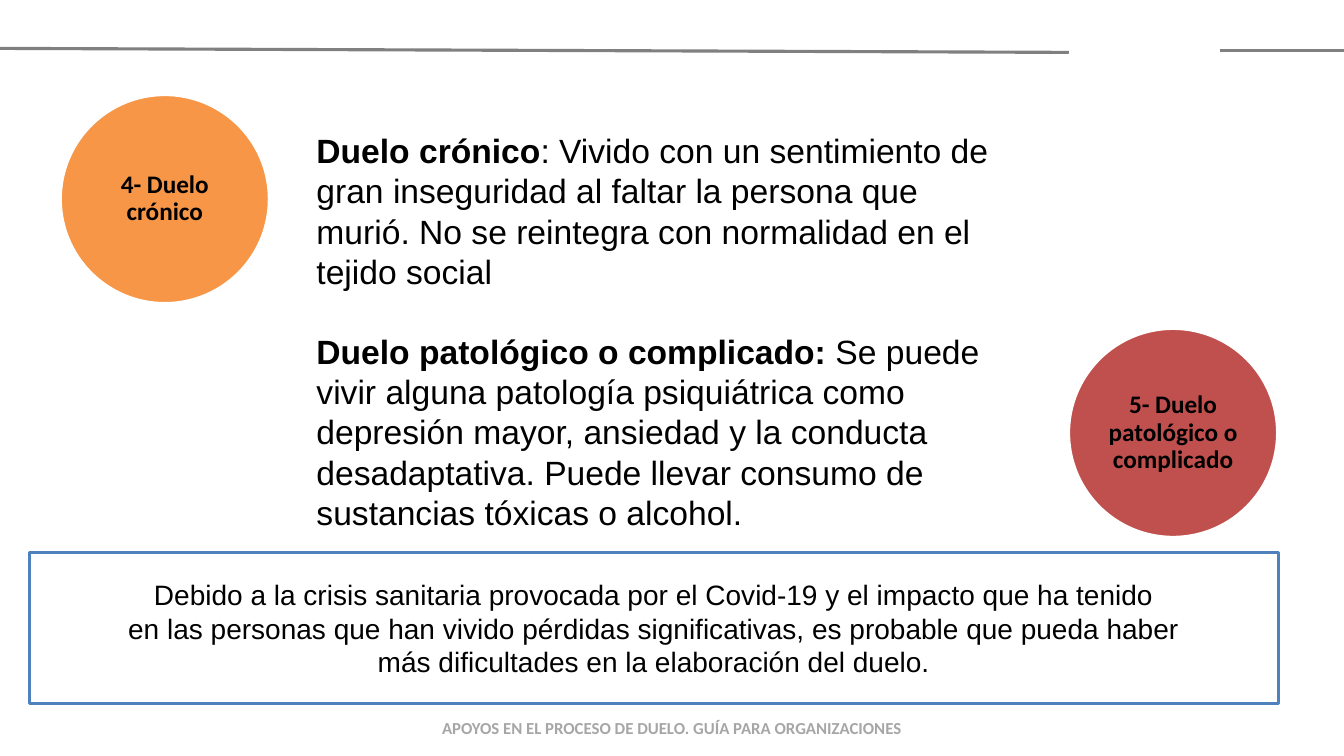
"""Build a slide on chronic and complicated grief."""
import pptx
import pptx.dml.color
import pptx.enum.shapes
import pptx.enum.text
import pptx.util
from lxml import etree

COLOURS = {
    "rule": "808080", "footer": "A6A6A6", "text": "000000", "paper": "FFFFFF",
    "chronic": "F79646", "complicated": "C0504D", "frame": "4F81BD",
}
SCALE = 9144
SHAPES = pptx.enum.shapes.MSO_SHAPE
ALIGN = pptx.enum.text.PP_ALIGN


def colour(name):
    return pptx.dml.color.RGBColor.from_string(COLOURS[name])


def px(*lengths):
    return [pptx.util.Emu(length * SCALE) for length in lengths]


def add_span(para, text, size=24, bold=False, font="Arial", ink="text"):
    for index, line in enumerate(text.split("\n")):
        if index:
            para.add_line_break()
        span = para.add_run()
        span.text = line
        span.font.size = pptx.util.Pt(size)
        span.font.bold = bold
        span.font.name = font
        span.font.color.rgb = colour(ink)


class GriefSlide:
    def __init__(self, width, height):
        self.deck = pptx.Presentation()
        self.deck.slide_width, self.deck.slide_height = px(width, height)
        self.page = self.deck.slides.add_slide(self.deck.slide_layouts[6])

    def rule(self, *ends):
        line = self.page.shapes.add_connector(
            pptx.enum.shapes.MSO_CONNECTOR.STRAIGHT, *px(*ends))
        line.line.color.rgb = colour("rule")
        line.line.width = pptx.util.Pt(2.25)
        properties = line.element.spPr
        etree.SubElement(properties, pptx.oxml.ns.qn("a:effectLst"))

    def text(self, place, align=ALIGN.LEFT):
        box = self.page.shapes.add_textbox(*px(*place))
        box.text_frame.word_wrap = True
        para = box.text_frame.paragraphs[0]
        para.alignment = align
        return para

    def definition(self, place, term, meaning):
        para = self.text(place)
        add_span(para, term, bold=True)
        add_span(para, meaning)

    def shape(self, kind, place, fill, line):
        box = self.page.shapes.add_shape(kind, *px(*place))
        box.shadow.inherit = False
        box.fill.solid()
        box.fill.fore_color.rgb = colour(fill)
        box.line.color.rgb = colour(line)
        box.line.width = pptx.util.Pt(2)
        frame = box.text_frame
        frame.word_wrap = True
        frame.vertical_anchor = pptx.enum.text.MSO_ANCHOR.MIDDLE
        frame.paragraphs[0].alignment = ALIGN.CENTER
        return frame

    def circle(self, left, top, fill, label):
        frame = self.shape(SHAPES.OVAL, (left, top, 207, 207), fill, "paper")
        (frame.margin_left, frame.margin_top,
         frame.margin_right, frame.margin_bottom) = px(3, 3, 3, 3)
        para = frame.paragraphs[0]
        para.line_spacing = 0.9
        add_span(para, label, size=18, bold=True, font="Calibri")

    def notice(self, place, text):
        frame = self.shape(SHAPES.RECTANGLE, place, "paper", "frame")
        add_span(frame.paragraphs[0], text, size=20)

    def footer(self, place, text):
        add_span(self.text(place, ALIGN.CENTER), text,
                 size=12, bold=True, font="Calibri", ink="footer")


def main():
    slide = GriefSlide(1333, 750)
    slide.rule(0, 48, 1060, 52)
    slide.rule(1210, 50, 1333, 50)
    slide.footer((0, 707, 1333, 30),
                 "APOYOS EN EL PROCESO DE DUELO. GUÍA PARA ORGANIZACIONES")
    slide.definition(
        (304, 124, 688, 159), "Duelo crónico",
        ": Vivido con un sentimiento de gran inseguridad al faltar la persona "
        "que murió. No se reintegra con normalidad en el tejido social")
    slide.definition(
        (304, 323, 718, 212), "Duelo patológico o complicado:",
        " Se puede vivir alguna patología psiquiátrica como depresión mayor, "
        "ansiedad y la conducta desadaptativa. Puede llevar consumo de "
        "sustancias tóxicas o alcohol.")
    slide.circle(60, 94, "chronic", "4- Duelo crónico")
    slide.circle(1060, 326, "complicated", "5- Duelo patológico o complicado")
    slide.notice(
        (29, 548, 1239, 150),
        "Debido a la crisis sanitaria provocada por el Covid-19 y el impacto "
        "que ha tenido\nen las personas que han vivido pérdidas "
        "significativas, es probable que pueda haber\nmás dificultades en la "
        "elaboración del duelo.")
    slide.deck.save("out.pptx")


if __name__ == "__main__":
    main()
